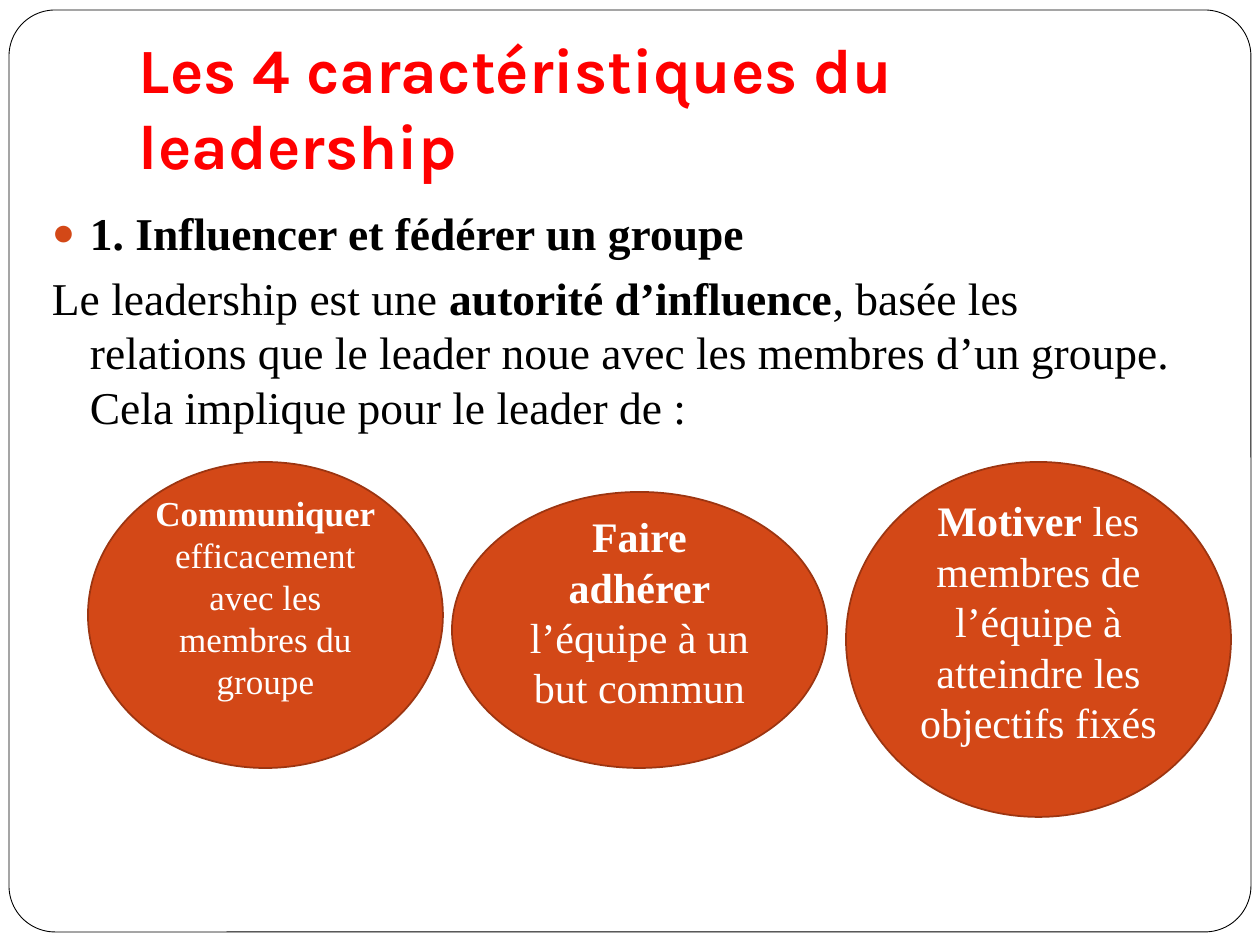
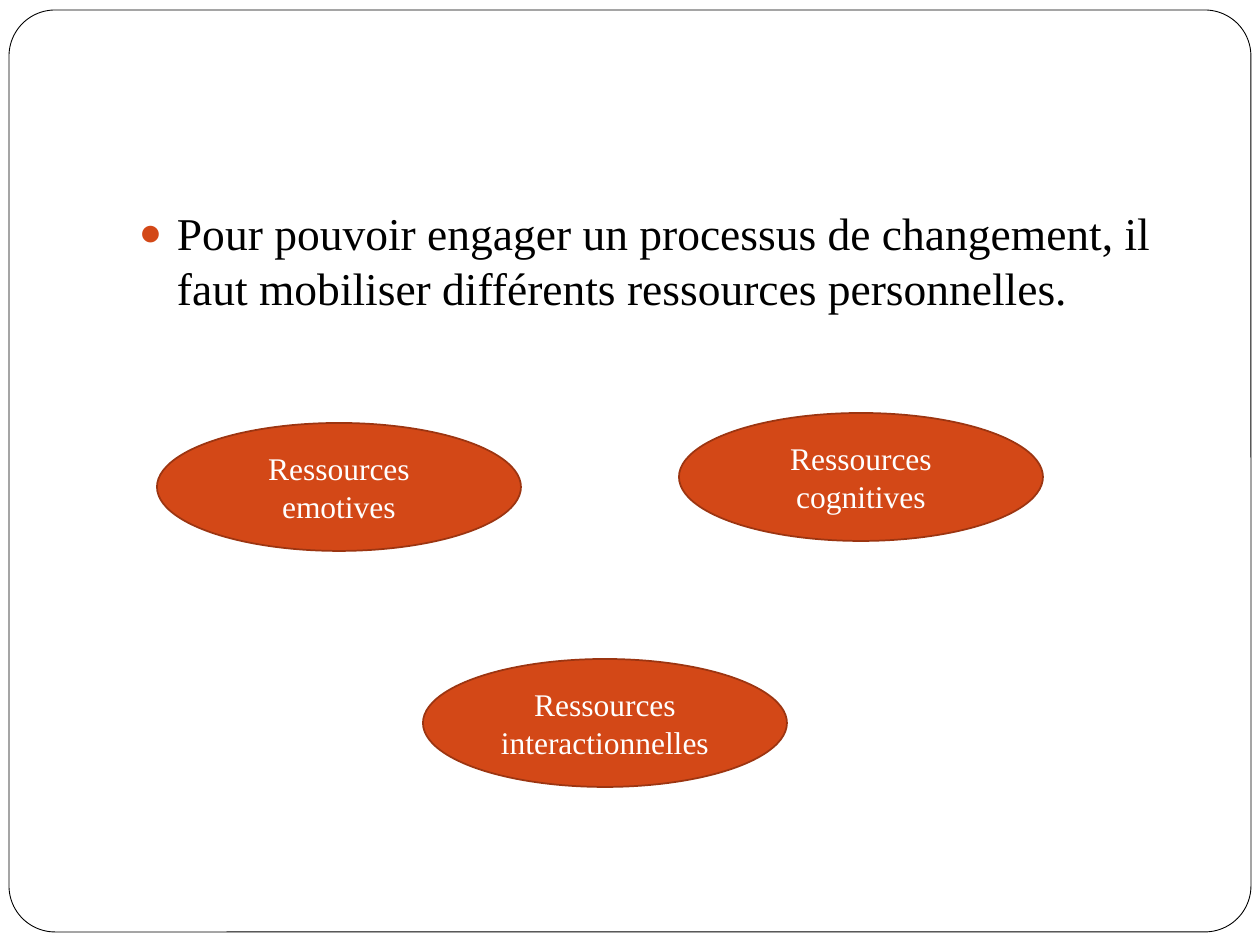
"""Build two slides on leadership and the resources needed for change."""
from dataclasses import dataclass

from lxml.etree import SubElement
from pptx import Presentation
from pptx.dml.color import RGBColor as Color
from pptx.enum.shapes import MSO_SHAPE as Preset
from pptx.enum.text import MSO_ANCHOR as Anchor, PP_ALIGN as Align
from pptx.oxml.ns import qn
from pptx.util import Emu, Pt


@dataclass(frozen=True)
class Theme:
    title_font: str = "Karla"
    text_font: str = "Times New Roman"
    title_color: str = "FF0000"
    ink: str = "000000"
    paper: str = "FFFFFF"
    accent: str = "D34817"
    accent_edge: str = "9C3511"
    title_size: int = 36
    body_size: int = 26
    large_size: int = 24
    medium_size: int = 20
    small_size: int = 18


THEME = Theme()
PX_PER_INCH = 126
SLIDE_SIZE = (1260, 945)
FRAME_BOX = (9, 10, 1242, 922)
TITLE_BOX = (126, 38, 1071, 157)
BODY_TOP, BODY_RIGHT, BODY_HEIGHT = 199, 1197, 630
HANGING_INDENT = 38
SIDE_INSET, EDGE_INSET = 13, 6
RAISED_INSET = 43
RESOURCE_SIZE = (364, 128)

TITLE = "Les 4 caractéristiques du leadership"
INFLUENCE = [
    (True, [("1. Influencer et fédérer un groupe", True)]),
    (False, [
        ("Le leadership est une ", False),
        ("autorité d’influence", True),
        (", basée les relations que le leader noue avec les membres d’un groupe. "
         "Cela implique pour le leader de :", False),
    ]),
]
LEADER_TASKS = [
    ((88, 462, 355, 306), THEME.medium_size,
     "Communiquer", " efficacement avec les membres du groupe"),
    ((452, 492, 375, 276), THEME.large_size,
     "Faire adhérer", " l’équipe à un but commun"),
    ((846, 462, 385, 355), THEME.large_size,
     "Motiver", " les membres de l’équipe à atteindre les objectifs fixés"),
]
CHANGE = [
    (True, [("Pour pouvoir engager un processus de changement, il faut mobiliser "
             "différents ressources personnelles.", False)]),
]
RESOURCES = [
    ((157, 423), "Ressources emotives"),
    ((679, 413), "Ressources cognitives"),
    ((423, 659), "Ressources interactionnelles"),
]


def px(length):
    return Emu(round(length * 914400 / PX_PER_INCH))


def place(box):
    return [px(length) for length in box]


def set_bullet(paragraph, bulleted):
    properties = paragraph._p.get_or_add_pPr()
    properties.set("marL", str(px(HANGING_INDENT)))
    properties.set("indent", str(-px(HANGING_INDENT)))
    if not bulleted:
        SubElement(properties, qn("a:buNone"))
        return
    color = SubElement(properties, qn("a:buClr"))
    SubElement(color, qn("a:srgbClr"), val=THEME.accent)
    SubElement(properties, qn("a:buSzPct"), val="85000")
    SubElement(properties, qn("a:buFont"), typeface=THEME.text_font)
    SubElement(properties, qn("a:buChar"), char="●")


def write_text(shape, paragraphs, *, size, color=THEME.ink, font=THEME.text_font,
               align=Align.LEFT, anchor=Anchor.TOP, bottom=EDGE_INSET,
               space_before=0, hanging=False):
    frame = shape.text_frame
    frame.word_wrap = True
    frame.vertical_anchor = anchor
    frame.margin_left = frame.margin_right = px(SIDE_INSET)
    frame.margin_top, frame.margin_bottom = px(EDGE_INSET), px(bottom)
    for index, (bulleted, runs) in enumerate(paragraphs):
        paragraph = frame.add_paragraph() if index else frame.paragraphs[0]
        paragraph.alignment = align
        paragraph.space_before = Pt(space_before)
        if hanging:
            set_bullet(paragraph, bulleted)
        for text, bold in runs:
            run = paragraph.add_run()
            run.text = text
            run.font.name, run.font.size, run.font.bold = font, Pt(size), bold
            run.font.color.rgb = Color.from_string(color)


def add_outlined(slide, preset, box, fill, line, width):
    shape = slide.shapes.add_shape(preset, *place(box))
    shape.shadow.inherit = False
    shape.fill.solid()
    shape.fill.fore_color.rgb = Color.from_string(fill)
    shape.line.color.rgb = Color.from_string(line)
    shape.line.width = Pt(width)
    return shape


def add_oval(slide, box, runs, size, bottom=EDGE_INSET):
    oval = add_outlined(slide, Preset.OVAL, box, THEME.accent, THEME.accent_edge, 1)
    write_text(oval, [(False, runs)], size=size, color=THEME.paper,
               align=Align.CENTER, anchor=Anchor.MIDDLE, bottom=bottom)


def add_framed_slide(presentation, body, body_left):
    slide = presentation.slides.add_slide(presentation.slide_layouts[6])
    frame = add_outlined(slide, Preset.ROUNDED_RECTANGLE, FRAME_BOX,
                         THEME.paper, THEME.ink, 0.5)
    frame.adjustments[0] = 0.05
    body_box = (body_left, BODY_TOP, BODY_RIGHT - body_left, BODY_HEIGHT)
    write_text(slide.shapes.add_textbox(*place(body_box)), body,
               size=THEME.body_size, space_before=5.8, hanging=True)
    return slide


def add_leadership_slide(presentation):
    slide = add_framed_slide(presentation, INFLUENCE, 39)
    write_text(slide.shapes.add_textbox(*place(TITLE_BOX)), [(False, [(TITLE, True)])],
               size=THEME.title_size, color=THEME.title_color, font=THEME.title_font,
               anchor=Anchor.BOTTOM, bottom=SIDE_INSET)
    for box, size, verb, complement in LEADER_TASKS:
        add_oval(slide, box, [(verb, True), (complement, False)], size, RAISED_INSET)


def add_change_slide(presentation):
    slide = add_framed_slide(presentation, CHANGE, 126)
    for corner, label in RESOURCES:
        add_oval(slide, corner + RESOURCE_SIZE, [(label, False)], THEME.small_size)


def main():
    presentation = Presentation()
    presentation.slide_width, presentation.slide_height = place(SLIDE_SIZE)
    add_leadership_slide(presentation)
    add_change_slide(presentation)
    presentation.save("out.pptx")


if __name__ == "__main__":
    main()
